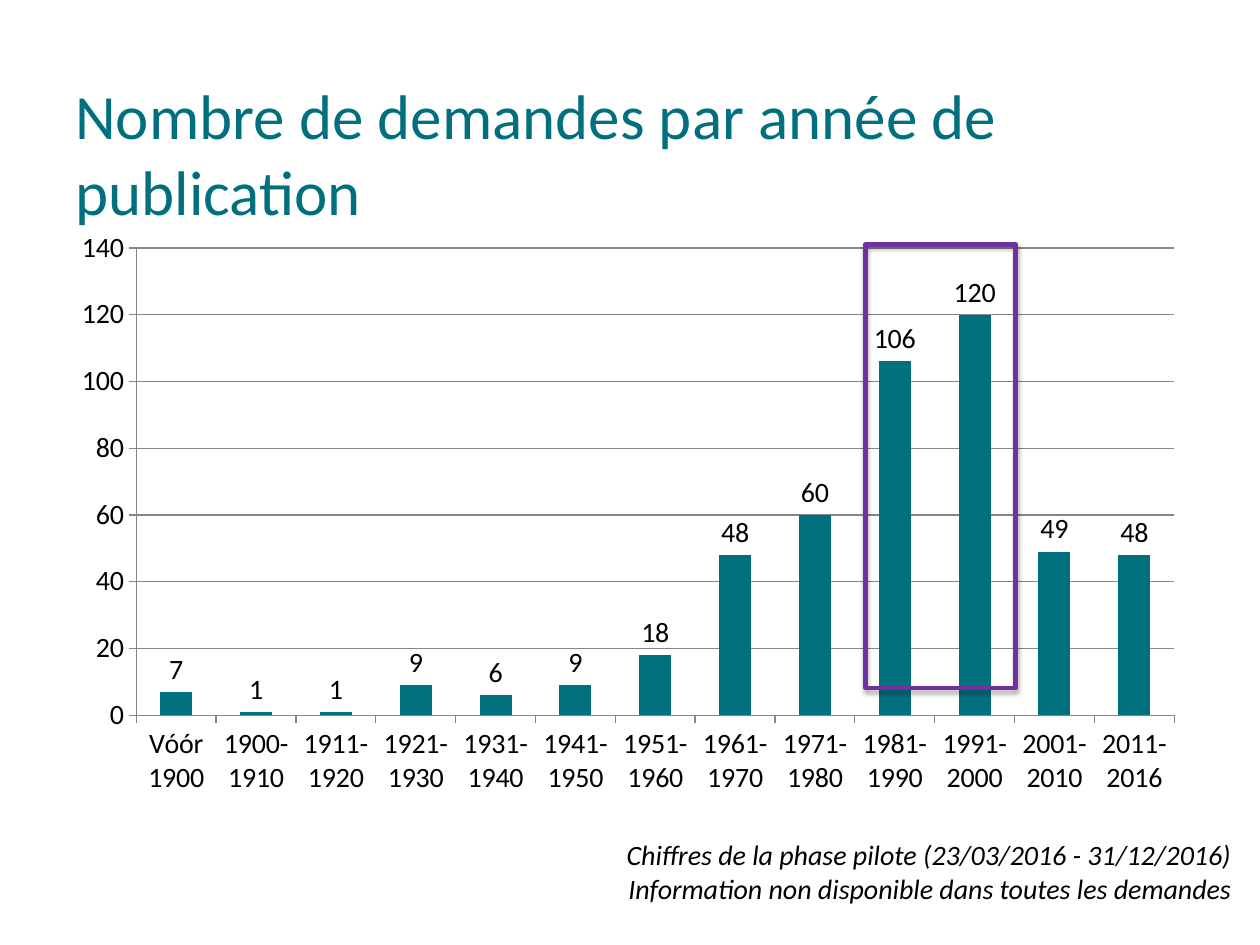
from lxml.etree import SubElement
from pptx import Presentation
from pptx.chart.data import CategoryChartData
from pptx.dml.color import RGBColor
from pptx.enum.chart import XL_CHART_TYPE as ChartType, XL_LABEL_POSITION as LabelPosition
from pptx.enum.chart import XL_TICK_MARK as TickMark
from pptx.enum.shapes import MSO_SHAPE as Shape
from pptx.enum.text import MSO_ANCHOR as Anchor, PP_ALIGN as Align
from pptx.oxml.ns import qn
from pptx.util import Inches, Pt

TEAL = RGBColor(0x00, 0x70, 0x7F)
PURPLE = RGBColor(0x70, 0x30, 0xA0)
BLACK = RGBColor(0, 0, 0)
GREY = RGBColor(0x86, 0x86, 0x86)
FONT = "Calibri"

TITLE = ["Nombre de demandes par année de publication"]
NOTES = [
    "Chiffres de la phase pilote (23/03/2016 - 31/12/2016)",
    "Information non disponible dans toutes les demandes",
]
REQUESTS = {
    "Vóór 1900": 7, "1900-1910": 1, "1911-1920": 1, "1921-1930": 9,
    "1931-1940": 6, "1941-1950": 9, "1951-1960": 18, "1961-1970": 48,
    "1971-1980": 60, "1981-1990": 106, "1991-2000": 120,
    "2001-2010": 49, "2011-2016": 48,
}

TITLE_BOX = (0.5, 0.87, 9, 0.68)
CHART_BOX = (0.47, 1.74, 9.03, 4.67)
NOTES_BOX = (1.53, 6.6, 8.34, 0.64)
HIGHLIGHT_BOX = (6.87, 1.94, 1.19, 3.52)


def place(box):
    return [Inches(length) for length in box]


def set_font(font, size, color=BLACK, italic=False):
    font.name = FONT
    font.size = Pt(size)
    font.color.rgb = color
    font.italic = italic
    font.bold = False


def add_text(slide, box, lines, size, color=BLACK, italic=False,
             align=Align.LEFT, anchor=Anchor.TOP):
    frame = slide.shapes.add_textbox(*place(box)).text_frame
    frame.word_wrap = True
    frame.vertical_anchor = anchor
    for index, line in enumerate(lines):
        paragraph = frame.add_paragraph() if index else frame.paragraphs[0]
        paragraph.alignment = align
        run = paragraph.add_run()
        run.text = line
        set_font(run.font, size, color, italic)


def add_request_chart(slide):
    data = CategoryChartData()
    data.categories = list(REQUESTS)
    data.add_series("Series 1", list(REQUESTS.values()))
    chart = slide.shapes.add_chart(
        ChartType.COLUMN_CLUSTERED, *place(CHART_BOX), data).chart
    chart.has_legend = False
    chart.has_title = False
    set_font(chart.font, 18)

    for axis in (chart.category_axis, chart.value_axis):
        axis.major_tick_mark = TickMark.OUTSIDE
        axis.minor_tick_mark = TickMark.NONE
        axis.format.line.color.rgb = GREY
        set_font(axis.tick_labels.font, 16)
    chart.value_axis.minimum_scale = 0
    chart.value_axis.maximum_scale = 140
    chart.value_axis.major_unit = 20
    chart.value_axis.major_gridlines.format.line.color.rgb = GREY

    plot = chart.plots[0]
    plot.gap_width = 150
    plot.vary_by_categories = False
    fill = plot.series[0].format.fill
    fill.solid()
    fill.fore_color.rgb = TEAL
    labels = plot.series[0].data_labels
    labels.show_value = True
    labels.position = LabelPosition.OUTSIDE_END
    set_font(labels.font, 16)


def add_highlight(slide):
    shape = slide.shapes.add_shape(Shape.RECTANGLE, *place(HIGHLIGHT_BOX))
    shape.fill.background()
    shape.line.color.rgb = PURPLE
    shape.line.width = Pt(2.5)
    shape.shadow.inherit = False
    effects = shape._element.spPr.find(qn("a:effectLst"))
    shadow = SubElement(effects, qn("a:outerShdw"), blurRad=str(Pt(3.1)),
                        dist=str(Pt(1.8)), dir="5400000", rotWithShape="0")
    color = SubElement(shadow, qn("a:srgbClr"), val=str(BLACK))
    SubElement(color, qn("a:alpha"), val="35000")


def main():
    presentation = Presentation()
    presentation.slide_width = Inches(10)
    presentation.slide_height = Inches(7.5)
    slide = presentation.slides.add_slide(presentation.slide_layouts[6])
    add_text(slide, TITLE_BOX, TITLE, 36, color=TEAL, anchor=Anchor.MIDDLE)
    add_request_chart(slide)
    add_text(slide, NOTES_BOX, NOTES, 16, italic=True, align=Align.RIGHT)
    add_highlight(slide)
    presentation.save("out.pptx")


if __name__ == "__main__":
    main()
